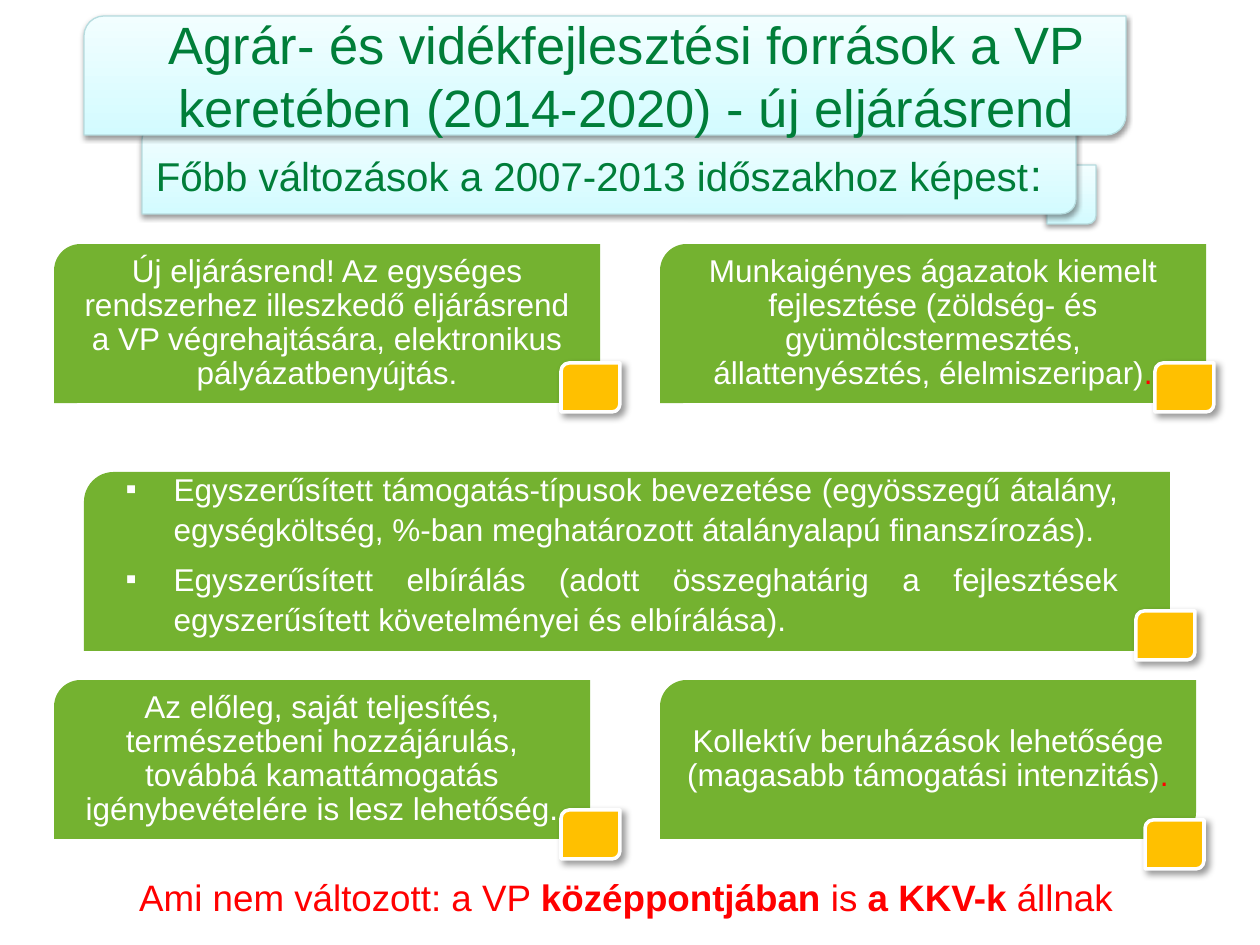
from lxml.etree import SubElement
from pptx import Presentation
from pptx.dml.color import RGBColor
from pptx.enum.shapes import MSO_SHAPE as Shape
from pptx.enum.text import MSO_ANCHOR as Anchor, MSO_AUTO_SIZE as AutoSize, PP_ALIGN as Align
from pptx.oxml.ns import qn
from pptx.util import Emu, Pt

PX = 914400 / 126
COLORS = {
    "title": "007E39", "green": "74B230", "white": "FFFFFF", "red": "FF0000",
    "yellow": "FFC000", "pale_bottom": "D3FBFF", "pale_top": "F2FEFF",
    "pale_line": "B6DCDF", "shadow": "000000",
}

# Panels behind the headings, back to front
HEADING_PANELS = [(1047, 165, 49, 59), (142, 125, 934, 89), (84, 16, 1042, 119)]

# Green cards: box and text pieces with their colour
CARDS = [
    ((54, 244, 546, 159), [("Új eljárásrend! Az egységes rendszerhez illeszkedő eljárásrend "
                            "a VP végrehajtására, elektronikus pályázatbenyújtás.", "white")]),
    ((660, 244, 546, 159), [("Munkaigényes ágazatok kiemelt fejlesztése (zöldség- és "
                             "gyümölcstermesztés, állattenyésztés, élelmiszeripar)", "white"),
                            (".", "red")]),
    ((54, 680, 536, 159), [("Az előleg, saját teljesítés, természetbeni hozzájárulás, "
                            "továbbá kamattámogatás igénybevételére is lesz lehetőség.", "white")]),
    ((660, 680, 536, 159), [("Kollektív beruházások lehetősége "
                             "(magasabb támogatási intenzitás)", "white"), (".", "red")]),
]
BULLETS = [
    "Egyszerűsített támogatás-típusok bevezetése (egyösszegű átalány, egységköltség, "
    "%-ban meghatározott átalányalapú finanszírozás).",
    "Egyszerűsített elbírálás (adott összeghatárig a fejlesztések egyszerűsített "
    "követelményei és elbírálása).",
]
TABS = [(561, 363), (1155, 363), (561, 810), (1145, 820), (1136, 611)]


def px(value):
    return Emu(round(value * PX))


def rgb(name):
    return RGBColor.from_string(COLORS[name])


def apply(target, formats):
    for name, value in formats.items():
        setattr(target, name, value)


def place(shape, box):
    apply(shape, dict(zip(("left", "top", "width", "height"), map(px, box))))


def add_shadow(shape, alpha, blur, distance, angle):
    effects = shape._element.spPr.find(qn("a:effectLst"))
    shadow = SubElement(effects, qn("a:outerShdw"), blurRad=str(Pt(blur)), dist=str(Pt(distance)),
                        dir=str(angle * 60000), algn="tl", rotWithShape="0")
    color = SubElement(shadow, qn("a:srgbClr"), val=COLORS["shadow"])
    SubElement(color, qn("a:alpha"), val=str(alpha * 1000))


def add_panel(slide, box, fill=None, line=None, line_width=0):
    """Rectangle with two rounded corners; without a fill colour it is a pale gradient."""
    shape = slide.shapes.add_shape(Shape.ROUND_2_DIAG_RECTANGLE, *map(px, box))
    shape.shadow.inherit = False
    if fill:
        shape.fill.solid()
        shape.fill.fore_color.rgb = rgb(fill)
    else:
        shape.fill.gradient()
        shape.fill.gradient_angle = 90
        for stop, name in zip(shape.fill.gradient_stops, ("pale_bottom", "pale_top")):
            stop.color.rgb = rgb(name)
    if line:
        shape.line.color.rgb = rgb(line)
        shape.line.width = Pt(line_width)
    else:
        shape.line.fill.background()
    return shape


def write(paragraph, pieces, **formats):
    """Fill a paragraph with (text, colour, size, bold) pieces."""
    apply(paragraph, formats)
    for text, color, size, bold in pieces:
        run = paragraph.add_run()
        run.text = text
        apply(run.font, {"name": "Arial", "size": Pt(size), "bold": bold})
        run.font.color.rgb = rgb(color)


def set_frame(shape, anchor):
    apply(shape.text_frame, {"word_wrap": True, "auto_size": AutoSize.NONE,
                             "vertical_anchor": anchor})
    return shape.text_frame


def add_text(slide, box, pieces, anchor):
    frame = set_frame(slide.shapes.add_textbox(*map(px, box)), anchor)
    write(frame.paragraphs[0], pieces, alignment=Align.CENTER)


def use_placeholder(slide, shape, box, anchor):
    """Place a placeholder and bring it to the front."""
    place(shape, box)
    slide.shapes._spTree.append(shape._element)
    return set_frame(shape, anchor)


def add_bullet(paragraph):
    properties = paragraph._p.get_or_add_pPr()
    properties.set("marL", str(px(126)))
    properties.set("indent", str(-px(48)))
    SubElement(properties, qn("a:buFont"), typeface="Arial")
    SubElement(properties, qn("a:buChar"), char="▪")


def main():
    presentation = Presentation()
    apply(presentation, {"slide_width": px(1260), "slide_height": px(945)})
    slide = presentation.slides.add_slide(presentation.slide_layouts[1])
    title, body = slide.placeholders

    # Headings
    for box in HEADING_PANELS:
        add_shadow(add_panel(slide, box, line="pale_line", line_width=0.75), 38, 3.1, 1.6, 90)
    add_text(slide, (54, -4, 1145, 158), [
        ("Agrár- és vidékfejlesztési források a VP keretében (2014-2020) - új eljárásrend",
         "title", 30, False)], Anchor.MIDDLE)
    frame = use_placeholder(slide, title, (32, 145, 1134, 59), Anchor.MIDDLE)
    write(frame.paragraphs[0], [
        ("Főbb változások a 2007-2013 időszakhoz képest", "title", 23, False),
        (":", "title", 25, False)], alignment=Align.CENTER)

    # Green cards
    for box, pieces in CARDS:
        frame = set_frame(add_panel(slide, box, "green"), Anchor.MIDDLE)
        write(frame.paragraphs[0], [(text, color, 18, False) for text, color in pieces],
              alignment=Align.CENTER, line_spacing=0.9)

    # Bulleted list on the wide panel
    add_panel(slide, (84, 472, 1086, 179), "green")
    frame = use_placeholder(slide, body, (35, 462, 1096, 176), Anchor.TOP)
    for index, text in enumerate(BULLETS):
        paragraph = frame.add_paragraph() if index else frame.paragraphs[0]
        add_bullet(paragraph)
        write(paragraph, [(text, "white", 18, False)], alignment=Align.JUSTIFY,
              line_spacing=1.05, space_before=Pt(6 if index else 0))

    # Yellow corner tabs
    for left, top in TABS:
        add_shadow(add_panel(slide, (left, top, 59, 49), "yellow", "white", 2), 40, 4, 3, 45)

    # Closing line
    closing = [("Ami nem változott: a VP ", False), ("középpontjában ", True), ("is ", False),
               ("a KKV-k ", True), ("állnak", False)]
    add_text(slide, (105, 869, 1042, 57),
             [(text, "red", 21, bold) for text, bold in closing], Anchor.TOP)

    presentation.save("out.pptx")


if __name__ == "__main__":
    main()
